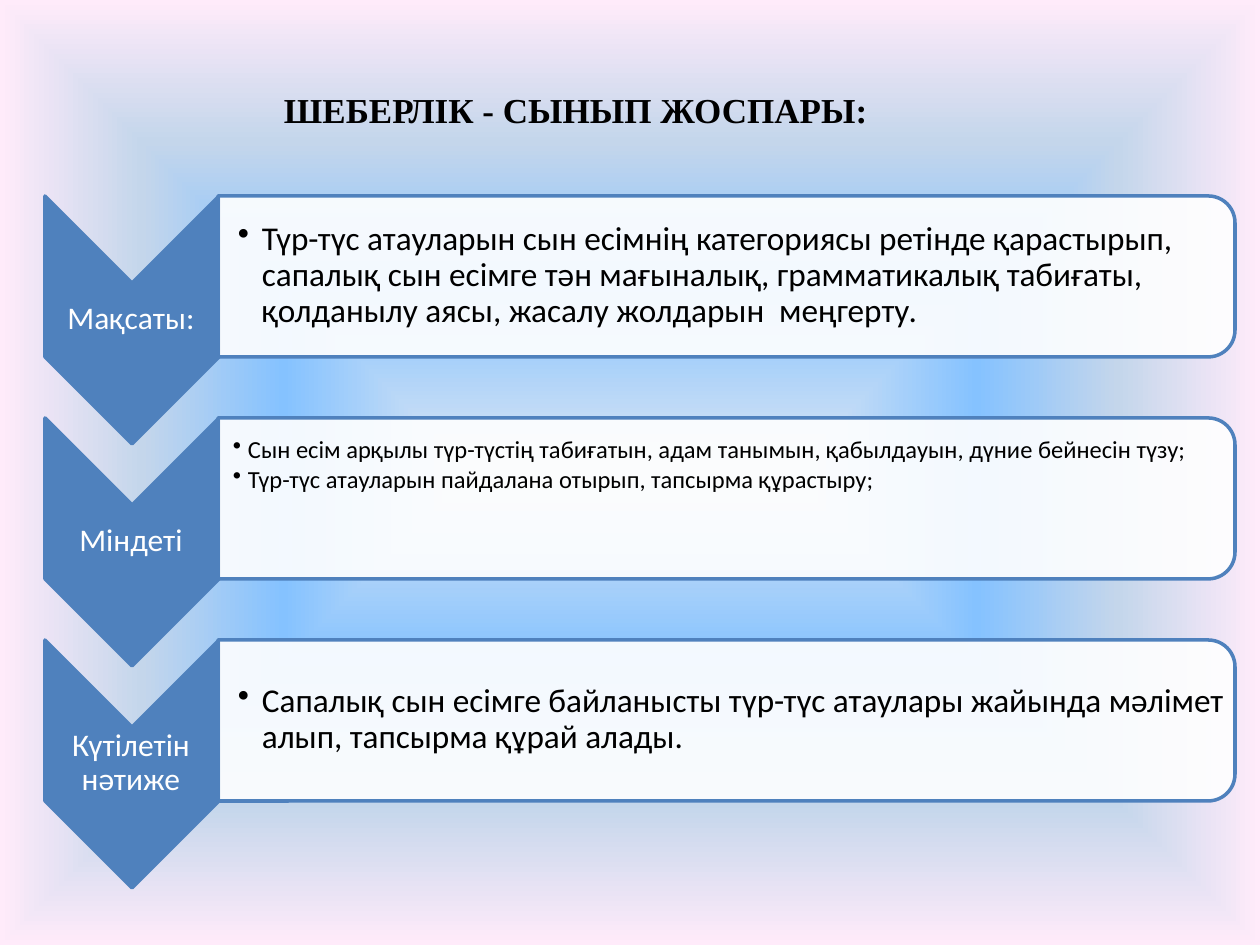
"""Build a lesson plan slide with three chevron rows: aim, tasks and expected result."""
from pptx import Presentation
from pptx.dml.color import RGBColor
from pptx.enum.shapes import MSO_SHAPE
from pptx.enum.text import MSO_ANCHOR, PP_ALIGN
from pptx.oxml import parse_xml
from pptx.oxml.ns import nsdecls, qn
from pptx.util import Pt

SCALE = 914400 / 126
COLORS = {"blue": "4F81BD", "white": "FFFFFF", "black": "000000"}
BACKDROP = [(0, "DCE6F2", 92), (40, "85C2FF", 100), (70, "C4D6EB", 100), (100, "FFEBFA", 100)]
PITCH = 222
ROWS = [
    ("Мақсаты:", 19, 19, 24, MSO_ANCHOR.MIDDLE, [
        "Түр-түс атауларын сын есімнің категориясы ретінде қарастырып, сапалық сын есімге тән "
        "мағыналық, грамматикалық табиғаты, қолданылу аясы, жасалу жолдарын  меңгерту."]),
    ("Міндеті", 14, 14, 15, MSO_ANCHOR.TOP, [
        "Сын есім арқылы түр-түстің табиғатын, адам танымын, қабылдауын, дүние бейнесін түзу;",
        "Түр-түс атауларын пайдалана отырып, тапсырма құрастыру;"]),
    ("Күтілетін нәтиже", 19, 19, 24, MSO_ANCHOR.MIDDLE, [
        "Сапалық сын есімге байланысты түр-түс атаулары жайында мәлімет алып, "
        "тапсырма құрай алады."]),
]


def add_panel(kind, bounds, fill):
    panel = page.shapes.add_shape(kind, *[round(side * SCALE) for side in bounds])
    panel.rotation = 90
    panel.shadow.inherit = False
    panel.fill.solid()
    panel.fill.fore_color.rgb = RGBColor.from_string(COLORS[fill])
    panel.line.color.rgb = RGBColor.from_string(COLORS["blue"])
    panel.line.width = Pt(2)
    return panel


def add_text(bounds, insets, anchor, lines, size, color, font="Calibri"):
    frame = page.shapes.add_textbox(*[round(side * SCALE) for side in bounds]).text_frame
    frame.word_wrap = True
    frame.vertical_anchor = anchor
    frame.margin_left, frame.margin_top, frame.margin_right, frame.margin_bottom = [
        round(inset * SCALE) for inset in insets]
    frame.text = "\n".join(lines)
    for paragraph in frame.paragraphs:
        paragraph.font.name = font
        paragraph.font.size = Pt(size)
        paragraph.font.color.rgb = RGBColor.from_string(COLORS[color])
    return frame.paragraphs


deck = Presentation()
deck.slide_width = round(1260 * SCALE)
deck.slide_height = round(945 * SCALE)
page = deck.slides.add_slide(deck.slide_layouts[6])

page.background.fill.gradient()
gradient = page.element.find(".//" + qn("a:gradFill"))
stops = "".join(
    f'<a:gs pos="{place * 1000}"><a:srgbClr val="{color}"><a:alpha val="{alpha * 1000}"/></a:srgbClr></a:gs>'
    for place, color, alpha in BACKDROP)
gradient.getparent().replace(gradient, parse_xml(
    f'<a:gradFill {nsdecls("a")} rotWithShape="1"><a:gsLst>{stops}</a:gsLst><a:path path="shape">'
    '<a:fillToRect l="50000" t="50000" r="50000" b="50000"/></a:path></a:gradFill>'))

title = add_text((263, 82, 784, 55), (21, 6, 13, 6), MSO_ANCHOR.TOP,
                 ["ШЕБЕРЛІК - СЫНЫП ЖОСПАРЫ:"], 20, "black", "Times New Roman")
title[0].font.bold = True

for row, (label, size, inset, indent, anchor, lines) in enumerate(ROWS):
    shift = row * PITCH
    add_panel(MSO_SHAPE.CHEVRON, (8, 233 + shift, 248, 174), "blue")
    heading = add_text((44, 282 + shift, 174, 74), (1, 1, 1, 1), MSO_ANCHOR.MIDDLE, [label], 18, "white")
    heading[0].alignment = PP_ALIGN.CENTER
    heading[0].line_spacing = 0.9

    body = add_panel(MSO_SHAPE.ROUND_2_SAME_RECTANGLE, (646, -232 + shift, 161, 1017), "white")
    tint = body.fill._xPr.find(".//" + qn("a:srgbClr"))
    tint.append(parse_xml(f'<a:alpha {nsdecls("a")} val="90000"/>'))

    top = 12 if anchor == MSO_ANCHOR.TOP else 1
    for paragraph in add_text((219, 203 + shift, 1009, 146), (inset, top, 1, 1), anchor, lines, size, "black"):
        paragraph.line_spacing = 0.9
        paragraph.space_after = Pt(2)
        properties = paragraph._p.get_or_add_pPr()
        properties.set("marL", str(round(indent * SCALE)))
        properties.set("indent", str(round(-indent * SCALE)))
        bullet = parse_xml(f'<a:buChar {nsdecls("a")} char="•"/>')
        properties.insert_element_before(bullet, "a:tabLst", "a:defRPr", "a:extLst")

deck.save("out.pptx")
